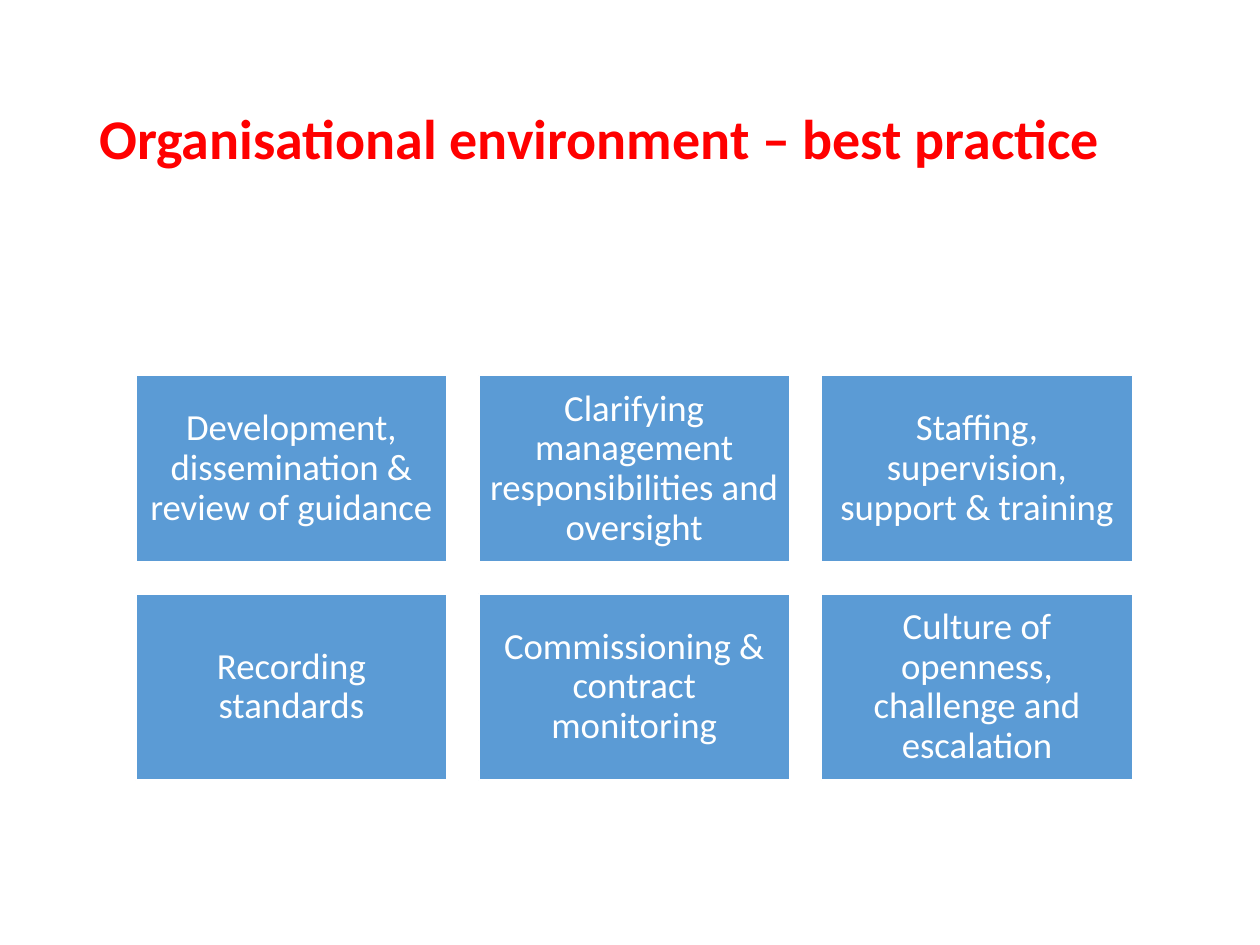
from pptx import Presentation
from pptx.dml.color import RGBColor
from pptx.enum.shapes import MSO_SHAPE
from pptx.enum.text import MSO_ANCHOR, PP_ALIGN
from pptx.util import Cm, Pt

RED = RGBColor(0xFF, 0x00, 0x00)
BLUE = RGBColor(0x5B, 0x9B, 0xD5)
WHITE = RGBColor(0xFF, 0xFF, 0xFF)

TITLE = "Organisational environment – best practice"
PRACTICES = [
    "Development, dissemination & review of guidance",
    "Clarifying management responsibilities and oversight",
    "Staffing, supervision, support & training",
    "Recording standards",
    "Commissioning & contract monitoring",
    "Culture of openness, challenge and escalation",
]
COLUMNS = 3
GRID_LEFT, GRID_TOP = 2.74, 7.57
BOX_WIDTH, BOX_HEIGHT = 6.27, 3.76
GAP = 0.64


class SlideBuilder:
    title_font = {"name": "Calibri", "size": Pt(32), "bold": True}
    box_font = {"name": "Calibri", "size": Pt(21), "bold": False}
    box_margins = {
        "margin_left": Cm(0.23),
        "margin_top": Cm(0.23),
        "margin_right": Cm(0.23),
        "margin_bottom": Cm(0.23),
    }

    def __init__(self, slide):
        self.slide = slide

    def add_text(self, shape, text, font_format, color, alignment):
        """Fill a shape with one vertically centred, wrapped paragraph."""
        frame = shape.text_frame
        frame.word_wrap = True
        frame.vertical_anchor = MSO_ANCHOR.MIDDLE
        paragraph = frame.paragraphs[0]
        paragraph.alignment = alignment
        paragraph.line_spacing = 0.9
        run = paragraph.add_run()
        run.text = text
        for name, value in font_format.items():
            setattr(run.font, name, value)
        run.font.color.rgb = color

    def add_title(self, text, left, top, width, height):
        shape = self.slide.shapes.add_textbox(
            Cm(left), Cm(top), Cm(width), Cm(height))
        self.add_text(shape, text, self.title_font, RED, PP_ALIGN.LEFT)

    def add_box(self, text, left, top, width, height):
        shape = self.slide.shapes.add_shape(
            MSO_SHAPE.RECTANGLE, Cm(left), Cm(top), Cm(width), Cm(height))
        shape.shadow.inherit = False
        shape.fill.solid()
        shape.fill.fore_color.rgb = BLUE
        shape.line.color.rgb = WHITE
        shape.line.width = Pt(1)
        for name, value in self.box_margins.items():
            setattr(shape.text_frame, name, value)
        self.add_text(shape, text, self.box_font, WHITE, PP_ALIGN.CENTER)


def main():
    presentation = Presentation()
    presentation.slide_width = Cm(25.4)
    presentation.slide_height = Cm(19.05)
    slide = presentation.slides.add_slide(presentation.slide_layouts[6])
    builder = SlideBuilder(slide)
    builder.add_title(TITLE, 1.75, 1.02, 21.9, 3.68)
    for index, practice in enumerate(PRACTICES):
        row, column = divmod(index, COLUMNS)
        builder.add_box(
            practice,
            GRID_LEFT + column * (BOX_WIDTH + GAP),
            GRID_TOP + row * (BOX_HEIGHT + GAP),
            BOX_WIDTH,
            BOX_HEIGHT,
        )
    presentation.save("out.pptx")


if __name__ == "__main__":
    main()
